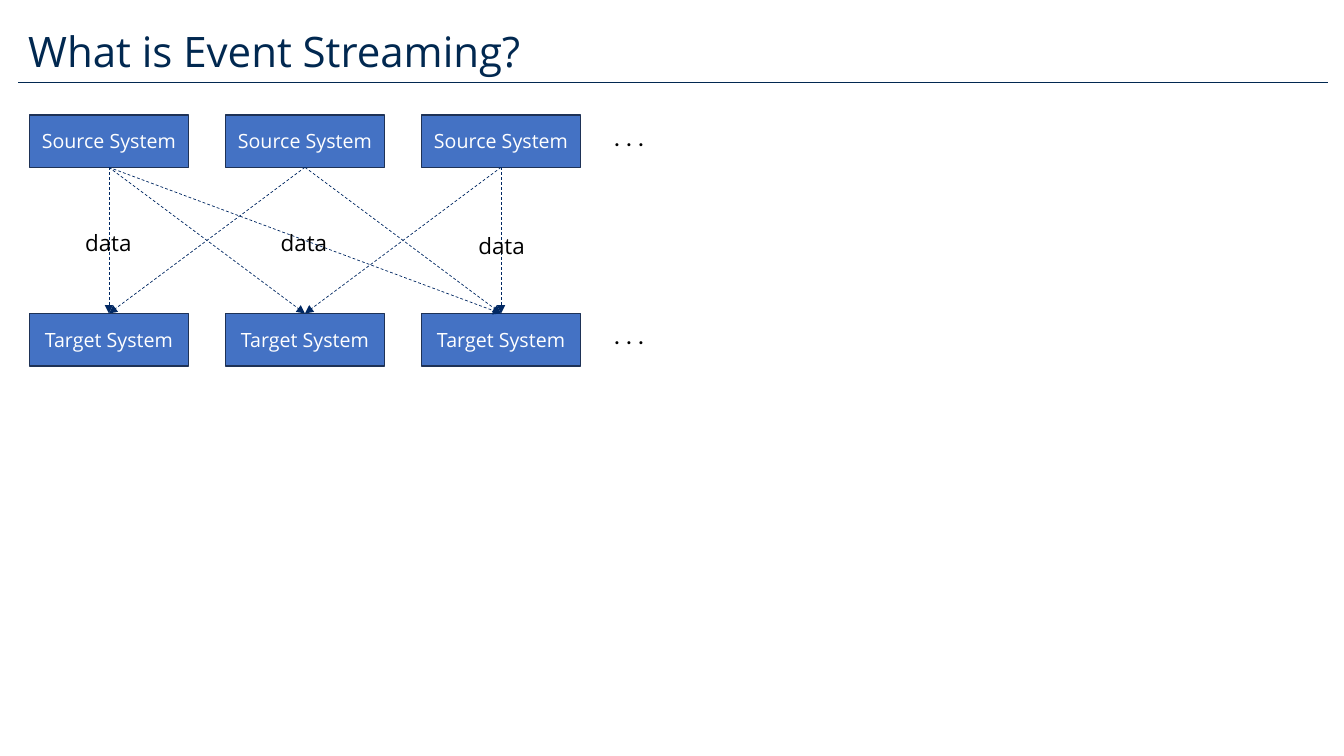
import pptx
import pptx.util
import pptx.dml.color
import pptx.enum.dml
import pptx.enum.shapes
import pptx.enum.text
import pptx.oxml.ns
import lxml.etree

Inches = pptx.util.Inches
Pt = pptx.util.Pt
RGBColor = pptx.dml.color.RGBColor
SHAPE = pptx.enum.shapes.MSO_SHAPE
ALIGN = pptx.enum.text.PP_ALIGN
MIDDLE = pptx.enum.text.MSO_ANCHOR.MIDDLE

WHITE = RGBColor(0xFF, 0xFF, 0xFF)
BLACK = RGBColor(0x00, 0x00, 0x00)
TITLE_NAVY = RGBColor(0x01, 0x28, 0x50)
RULE_NAVY = RGBColor(0x01, 0x28, 0x51)
ARROW_NAVY = RGBColor(0x01, 0x28, 0x63)
BOX_BLUE = RGBColor(0x44, 0x72, 0xC4)
BOX_BORDER = RGBColor(0x1E, 0x32, 0x56)

SYSTEM_COUNT = 3
SYSTEM_WIDTH, SYSTEM_HEIGHT = 1.58, 0.52
FLOWS = [(0, 0), (0, 1), (0, 2), (1, 0), (1, 2), (2, 1), (2, 2)]
# Label positions relative to the diagram
DATA_LABELS = [(0.38, 1.15), (2.32, 1.15), (4.28, 1.18)]


def write_text(shape, text, size, color, font="Open Sans", align=ALIGN.CENTER):
    frame = shape.text_frame
    frame.text = text
    frame.vertical_anchor = MIDDLE
    para = frame.paragraphs[0]
    para.alignment = align
    run = para.runs[0]
    run.font.size = Pt(size)
    run.font.name = font
    run.font.color.rgb = color


def add_line(page, start, end, color):
    line = page.shapes.add_connector(
        pptx.enum.shapes.MSO_CONNECTOR.STRAIGHT,
        *(Inches(value) for value in (*start, *end)))
    line.line.color.rgb = color
    line.line.width = Pt(0.5)
    lxml.etree.SubElement(line.element.spPr, pptx.oxml.ns.qn("a:effectLst"))
    return line


def add_header(page, left, top, width, height):
    add_line(page, (left, top + height), (left + width, top + height), RULE_NAVY)
    title = page.shapes.title
    title.left, title.top = Inches(left), Inches(top)
    title.width, title.height = Inches(width), Inches(height)
    write_text(title, "What is Event Streaming?", 30, TITLE_NAVY, align=ALIGN.LEFT)
    title.text_frame.paragraphs[0].line_spacing = 0.9


def add_system_row(page, name, left, top, width):
    """Add evenly spaced systems and a trailing ellipsis; return the systems."""
    pitch = (width - SYSTEM_WIDTH) / (SYSTEM_COUNT - 1)
    systems = []
    for index in range(SYSTEM_COUNT):
        system = page.shapes.add_shape(
            SHAPE.RECTANGLE, Inches(left + index * pitch), Inches(top),
            Inches(SYSTEM_WIDTH), Inches(SYSTEM_HEIGHT))
        system.shadow.inherit = False
        system.fill.solid()
        system.fill.fore_color.rgb = BOX_BLUE
        system.line.color.rgb = BOX_BORDER
        system.line.width = Pt(1)
        write_text(system, name, 14, WHITE)
        systems.append(system)
    ellipsis = page.shapes.add_textbox(
        Inches(left + width + 0.23), Inches(top + 0.01), Inches(0.53), Inches(0.4))
    write_text(ellipsis, ". . .", 18, BLACK, "Calibri", ALIGN.LEFT)
    return systems


def add_flow(page, source, target):
    arrow = add_line(page, (0, 0), (1, 1), ARROW_NAVY)
    arrow.begin_connect(source, 2)
    arrow.end_connect(target, 0)
    arrow.line.dash_style = pptx.enum.dml.MSO_LINE.DASH
    lxml.etree.SubElement(arrow.line._get_or_add_ln(),
                          pptx.oxml.ns.qn("a:tailEnd"), type="triangle")


def add_data_label(page, left, top):
    label = page.shapes.add_shape(
        SHAPE.ROUNDED_RECTANGLE, Inches(left), Inches(top), Inches(0.81), Inches(0.23))
    label.shadow.inherit = False
    label.fill.background()
    label.line.fill.background()
    write_text(label, "data", 16, BLACK)


def add_streaming_diagram(page, left, top, width, height):
    sources = add_system_row(page, "Source System", left, top, width)
    targets = add_system_row(page, "Target System", left,
                             top + height - SYSTEM_HEIGHT, width)
    for source, target in FLOWS:
        add_flow(page, sources[source], targets[target])
    for label_left, label_top in DATA_LABELS:
        add_data_label(page, left + label_left, top + label_top)


def main():
    deck = pptx.Presentation()
    deck.slide_width, deck.slide_height = Inches(13.33), Inches(7.5)
    page = deck.slides.add_slide(deck.slide_layouts.get_by_name("Title Only"))
    add_header(page, 0.18, 0.24, 12.99, 0.58)
    add_streaming_diagram(page, 0.29, 1.14, 5.47, 2.49)
    deck.save("out.pptx")


if __name__ == "__main__":
    main()
